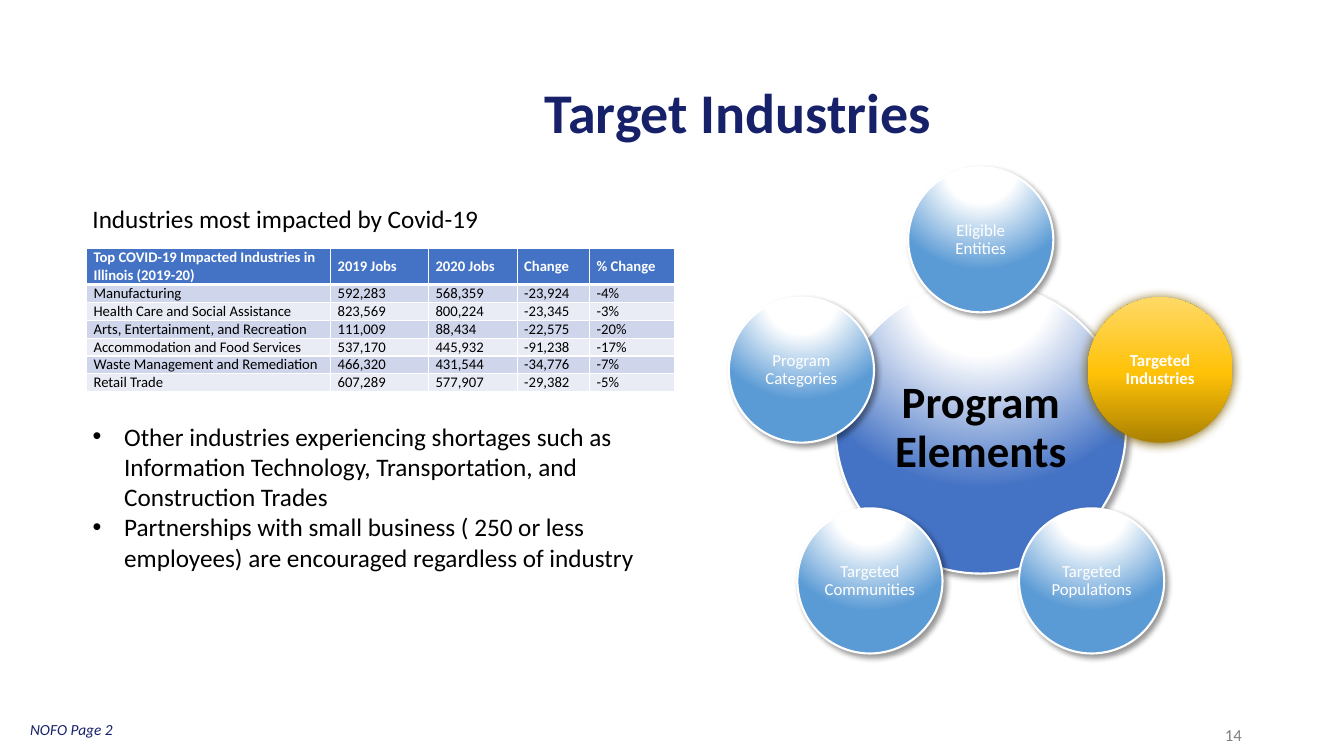
from dataclasses import dataclass
from math import cos, radians, sin

from lxml.etree import SubElement
from pptx import Presentation
from pptx.dml.color import RGBColor
from pptx.enum.shapes import MSO_SHAPE
from pptx.enum.text import MSO_ANCHOR, MSO_AUTO_SIZE, PP_ALIGN
from pptx.oxml.ns import qn
from pptx.util import Pt


@dataclass(frozen=True)
class Theme:
    font: str = "Calibri"
    navy: str = "172169"
    black: str = "000000"
    white: str = "FFFFFF"
    grey: str = "808080"
    blue: str = "4472C4"
    sky: str = "5B9BD5"
    glow: str = "7F6000"
    gold: tuple = ((0, "AB8100"), (48, "FFC208"), (100, "FFD966"))
    bands: tuple = ("E9EBF5", "CFD5EA")
    title: float = 40
    hub: float = 32
    body: float = 18
    small: float = 12
    footer: float = 11
    table: float = 10.5


T = Theme()

COLUMNS = (174.3, 70, 63.3, 51.8, 60.5)
ROW_HEIGHT = 12.6
JOBS = (
    ("Top COVID-19 Impacted Industries in Illinois (2019-20)",
     "2019 Jobs", "2020 Jobs", "Change", "% Change"),
    ("Manufacturing", "592,283", "568,359", "-23,924", "-4%"),
    ("Health Care and Social Assistance", "823,569", "800,224", "-23,345", "-3%"),
    ("Arts, Entertainment, and Recreation", "111,009", "88,434", "-22,575", "-20%"),
    ("Accommodation and Food Services", "537,170", "445,932", "-91,238", "-17%"),
    ("Waste Management and Remediation", "466,320", "431,544", "-34,776", "-7%"),
    ("Retail Trade", "607,289", "577,907", "-29,382", "-5%"),
)
BULLETS = (
    "Other industries experiencing shortages such as Information Technology, "
    "Transportation, and Construction Trades",
    "Partnerships with small business ( 250 or less employees) are encouraged "
    "regardless of industry",
)
ELEMENTS = ("Eligible Entities", "Targeted Industries", "Targeted Populations",
            "Targeted Communities", "Program Categories")
CURRENT = "Targeted Industries"
HUB_X, HUB_Y, HUB_SIZE = 700.6, 306, 207.4
ORBIT, ELEMENT_SIZE = 134.7, 103.7


def add_run(p, text, size, color, bold=False, italic=False):
    r = p.add_run()
    r.text = text
    f = r.font
    f.name, f.size, f.bold, f.italic = T.font, Pt(size), bold, italic
    f.color.rgb = RGBColor.from_string(color)


def place(sp, left, top, width, height):
    sp.left, sp.top, sp.width, sp.height = Pt(left), Pt(top), Pt(width), Pt(height)


def setup_frame(tf, anchor):
    tf.word_wrap = True
    tf.auto_size = MSO_AUTO_SIZE.NONE
    tf.vertical_anchor = anchor


def add_title(s, text):
    sp = s.shapes.title
    place(sp, 316.8, 60.5, 420.5, 43.9)
    setup_frame(sp.text_frame, MSO_ANCHOR.MIDDLE)
    p = sp.text_frame.paragraphs[0]
    p.alignment, p.line_spacing = PP_ALIGN.CENTER, 0.9
    add_run(p, text, T.title, T.navy, bold=True)


def add_bullets(s, items):
    sp = s.placeholders[1]
    place(sp, 59, 297, 436.3, 116)
    tf = sp.text_frame
    setup_frame(tf, MSO_ANCHOR.TOP)
    for i, item in enumerate(items):
        p = tf.add_paragraph() if i else tf.paragraphs[0]
        p.space_before = Pt(0)
        pPr = p._p.get_or_add_pPr()
        pPr.set("marL", str(Pt(22.5)))
        pPr.set("indent", str(-Pt(22.5)))
        add_run(p, item, T.body, T.black)


def add_label(s, box, text, size, color, align=PP_ALIGN.LEFT,
              anchor=MSO_ANCHOR.TOP, italic=False):
    sp = s.shapes.add_textbox(*map(Pt, box))
    setup_frame(sp.text_frame, anchor)
    p = sp.text_frame.paragraphs[0]
    p.alignment = align
    add_run(p, text, size, color, italic=italic)


def add_color(parent, color):
    return SubElement(parent, qn("a:srgbClr"), val=color)


def set_gradient(sp, stops, radial):
    """Fill with a glossy highlight from above, or with a bottom-to-top blend."""
    sp.fill.gradient()
    grad = sp._element.spPr.find(qn("a:gradFill"))
    for child in list(grad):
        grad.remove(child)
    gs_list = SubElement(grad, qn("a:gsLst"))
    for pos, color in stops:
        add_color(SubElement(gs_list, qn("a:gs"), pos=str(pos * 1000)), color)
    if radial:
        path = SubElement(grad, qn("a:path"), {"path": "circle"})
        SubElement(path, qn("a:fillToRect"), l="50000", t="-80000", r="50000", b="180000")
    else:
        SubElement(grad, qn("a:lin"), ang=str(270 * 60000), scaled="0")


def set_shadow(sp, color, opacity, blur, distance, angle):
    sp.shadow.inherit = False
    effects = sp._element.spPr.find(qn("a:effectLst"))
    shadow = SubElement(effects, qn("a:outerShdw"), blurRad=str(Pt(blur)),
                        dist=str(Pt(distance)), dir=str(angle * 60000), rotWithShape="0")
    SubElement(add_color(shadow, color), qn("a:alpha"), val=str(opacity * 1000))


def add_ball(s, x, y, size, text, text_size, text_color, color, bold=False, current=False):
    """Draw a labelled ball centred on x, y; the current one is gold."""
    sp = s.shapes.add_shape(MSO_SHAPE.OVAL, Pt(x - size / 2), Pt(y - size / 2),
                            Pt(size), Pt(size))
    if current:
        set_gradient(sp, T.gold, radial=False)
        sp.line.fill.background()
        set_shadow(sp, T.glow, 100, 8.5, 1, 90)
    else:
        set_gradient(sp, ((0, T.white), (35, T.white), (100, color)), radial=True)
        sp.line.color.rgb = RGBColor.from_string(T.white)
        sp.line.width = Pt(1.5)
        set_shadow(sp, T.black, 40, 4, 3, 45)
    tf = sp.text_frame
    setup_frame(tf, MSO_ANCHOR.MIDDLE)
    tf.margin_left = tf.margin_right = tf.margin_top = tf.margin_bottom = Pt(1.5)
    p = tf.paragraphs[0]
    p.alignment, p.line_spacing = PP_ALIGN.CENTER, 0.9
    add_run(p, text, text_size, text_color, bold=bold)


def add_program_wheel(s):
    add_ball(s, HUB_X, HUB_Y, HUB_SIZE, "Program Elements", T.hub, T.black, T.blue, bold=True)
    for i, name in enumerate(ELEMENTS):
        angle = radians(i * 360 / len(ELEMENTS))
        current = name == CURRENT
        add_ball(s, HUB_X + ORBIT * sin(angle), HUB_Y - ORBIT * cos(angle), ELEMENT_SIZE,
                 name, T.small, T.white, T.sky, bold=current, current=current)


def set_borders(cell, **widths):
    tcPr = cell._tc.get_or_add_tcPr()
    for side in "LRTB":
        ln = SubElement(tcPr, qn(f"a:ln{side}"), w=str(Pt(widths.get(side, 1))))
        add_color(SubElement(ln, qn("a:solidFill")), T.white)


def add_jobs_table(s):
    table = s.shapes.add_table(len(JOBS), len(COLUMNS), Pt(61.9), Pt(177.8),
                               Pt(sum(COLUMNS)), Pt(ROW_HEIGHT * (len(JOBS) + 1))).table
    for column, width in zip(table.columns, COLUMNS):
        column.width = Pt(width)
    for i, values in enumerate(JOBS):
        header = i == 0
        table.rows[i].height = Pt(ROW_HEIGHT * (2 if header else 1))
        for j, value in enumerate(values):
            cell = table.cell(i, j)
            set_borders(cell, T=3 if i == 1 else 1, B=3 if header else 1)
            cell.fill.solid()
            cell.fill.fore_color.rgb = RGBColor.from_string(T.blue if header else T.bands[i % 2])
            cell.margin_left = cell.margin_right = Pt(5)
            cell.margin_top = cell.margin_bottom = Pt(0)
            cell.vertical_anchor = MSO_ANCHOR.MIDDLE if header or j else MSO_ANCHOR.BOTTOM
            add_run(cell.text_frame.paragraphs[0], value, T.table,
                    T.white if header else T.black, bold=header)


def main():
    prs = Presentation()
    prs.slide_width, prs.slide_height = Pt(960), Pt(540)
    s = prs.slides.add_slide(prs.slide_layouts[1])
    add_title(s, "Target Industries")
    add_label(s, (678.2, 510.5, 216, 28.8), "14", T.small, T.grey,
              align=PP_ALIGN.RIGHT, anchor=MSO_ANCHOR.MIDDLE)
    add_program_wheel(s)
    add_label(s, (59, 141.8, 350.6, 28.8), "Industries most impacted by Covid-19",
              T.body, T.black)
    add_jobs_table(s)
    add_bullets(s, BULLETS)
    add_label(s, (14.4, 510.5, 167.8, 20.9), "NOFO Page 2", T.footer, T.navy, italic=True)
    prs.save("out.pptx")


if __name__ == "__main__":
    main()
